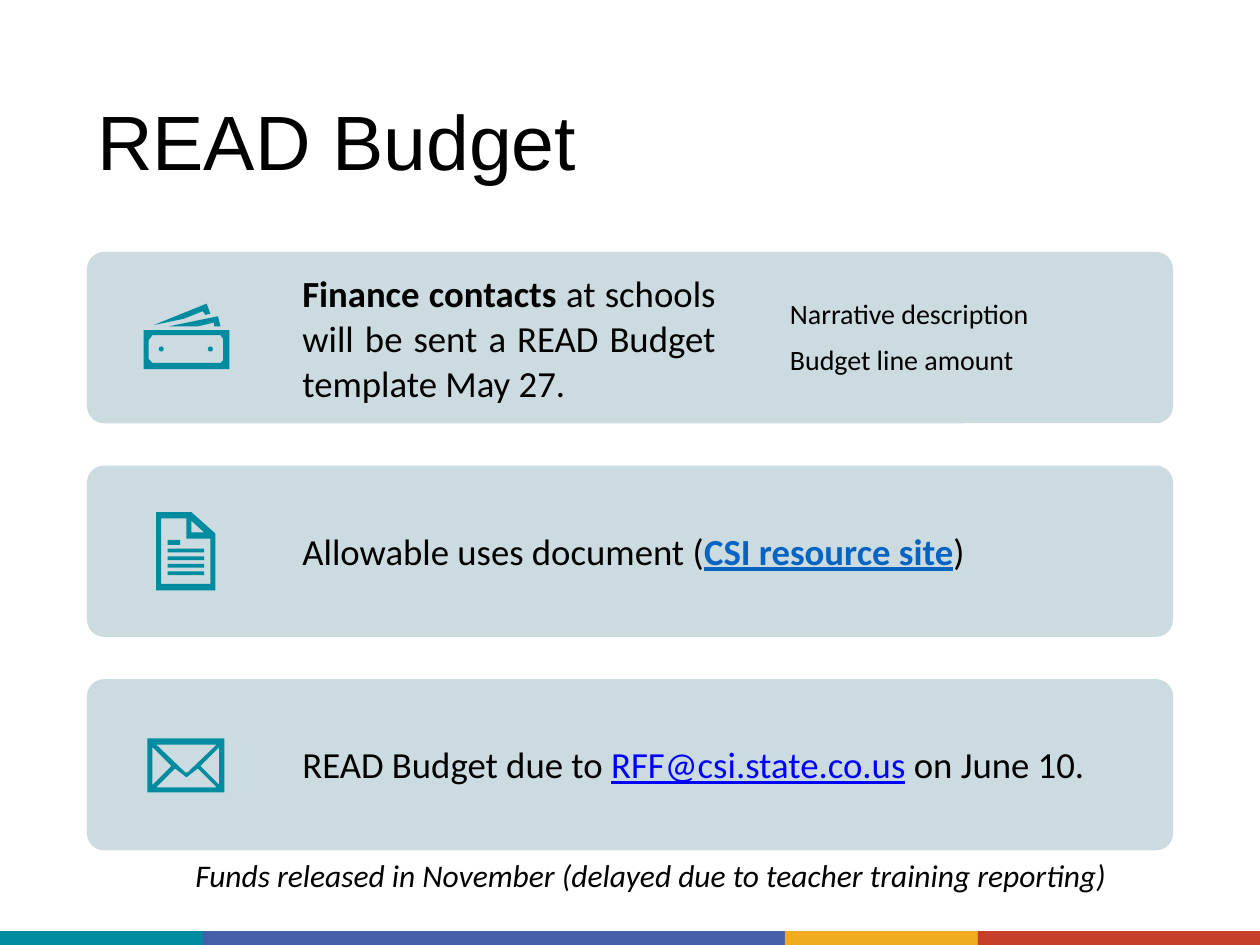
from dataclasses import dataclass
from pptx import Presentation
from pptx.dml.color import RGBColor
from pptx.enum.shapes import MSO_SHAPE
from pptx.enum.text import MSO_ANCHOR, PP_ALIGN
from pptx.util import Inches, Pt


@dataclass(frozen=True)
class Theme:
    teal: str = "008CA0"
    blue: str = "455FA9"
    gold: str = "EFAA1F"
    red: str = "C63F28"
    card: str = "CBDBDF"
    ink: str = "000000"
    link: str = "0563C1"
    mail: str = "0000FF"
    head: str = "Arial"
    body: str = "Calibri"
    big: int = 44
    text: int = 21
    note: int = 18
    small: int = 16


THEME = Theme()


def apply(item, **values):
    for key, value in values.items():
        setattr(item, key, value)


def paint(shape, color):
    shape.shadow.inherit = False
    shape.fill.solid()
    shape.fill.fore_color.rgb = RGBColor.from_string(color)
    shape.line.fill.background()


def write(para, runs, **base):
    for text, extra in runs:
        values = {"name": THEME.body, "size": THEME.text, "color": THEME.ink, **base, **extra}
        run = para.add_run()
        run.text = text
        run.font.color.rgb = RGBColor.from_string(values.pop("color"))
        apply(run.font, **{**values, "size": Pt(values["size"])})


def set_frame(frame, **values):
    margins = {"margin_left": 0, "margin_right": 0, "margin_top": 0, "margin_bottom": 0}
    apply(frame, **{"word_wrap": True, "vertical_anchor": MSO_ANCHOR.TOP, **margins, **values})


def add_text(slide, box, lines, form=None, **base):
    frame = slide.shapes.add_textbox(*map(Inches, box)).text_frame
    set_frame(frame)
    for i, runs in enumerate(lines):
        para = frame.add_paragraph() if i else frame.paragraphs[0]
        apply(para, **(form or {}))
        write(para, runs, **base)


def rect(left, top, right, bottom):
    return [(left, top), (right, top), (right, bottom), (left, bottom)]


def add_icon(slide, left, top, loops):
    first, *rest = [[(Inches(x), Inches(y)) for x, y in loop] for loop in loops]
    pen = slide.shapes.build_freeform(*first[0], scale=1.0)
    pen.add_line_segments(first[1:], close=True)
    for loop in rest:
        pen.move_to(*loop[0])
        pen.add_line_segments(loop[1:], close=True)
    paint(pen.convert_to_shape(Inches(left), Inches(top)), THEME.teal)


def add_cash(slide, left, top):
    add_icon(slide, left, top, [
        rect(0.45, 0.62, 1.13, 0.93),
        [(0.52, 0.66), (0.49, 0.7), (0.49, 0.85), (0.52, 0.88),
         (1.06, 0.88), (1.08, 0.86), (1.08, 0.69), (1.06, 0.66)],
        [(0.98, 0.49), (0.95, 0.41), (0.53, 0.58), (0.77, 0.53), (0.92, 0.47), (0.94, 0.5)],
        [(1.06, 0.59), (1.04, 0.51), (0.65, 0.59), (0.88, 0.59), (1.01, 0.56), (1.01, 0.59)],
    ])
    for x in (0.57, 0.96):
        dot = slide.shapes.add_shape(
            MSO_SHAPE.OVAL, Inches(left + x), Inches(top + 0.75), Inches(0.04), Inches(0.04))
        paint(dot, THEME.teal)


def add_page(slide, left, top):
    rows = [rect(0.64, y, 0.93, y + 0.03) for y in (0.66, 0.72, 0.78, 0.84)]
    add_icon(slide, left, top, [
        [(0.55, 0.37), (0.83, 0.37), (1.02, 0.54), (1.02, 0.99), (0.55, 0.99)],
        [(0.59, 0.42), (0.79, 0.42), (0.79, 0.58), (0.98, 0.58), (0.98, 0.94), (0.59, 0.94)],
        [(0.83, 0.44), (0.93, 0.53), (0.83, 0.53)],
        rect(0.64, 0.59, 0.74, 0.63), *rows,
    ])


def add_mail(slide, left, top):
    add_icon(slide, left, top, [
        rect(0.48, 0.47, 1.09, 0.9),
        [(0.55, 0.52), (0.78, 0.74), (0.8, 0.74), (1.03, 0.52)],
        [(0.52, 0.54), (0.67, 0.69), (0.52, 0.84)],
        [(1.05, 0.54), (0.9, 0.69), (1.05, 0.84)],
        [(0.55, 0.86), (0.7, 0.71), (0.79, 0.78), (0.88, 0.71), (1.03, 0.86)],
    ])


def add_card(slide, box, icon, runs, inset, size, form=None):
    left, top = box[:2]
    card = slide.shapes.add_shape(MSO_SHAPE.ROUNDED_RECTANGLE, *map(Inches, box))
    card.adjustments[0] = 0.1
    paint(card, THEME.card)
    icon(slide, left, top)
    add_text(slide, (left + 1.71, top + inset, *size), [runs], form)


def add_cards(slide, box):
    left, top, width, height = box
    tall, gap = 1.36, (height - 3 * 1.36) / 2
    bold = {"bold": True}
    link = {"bold": True, "underline": True, "color": THEME.link}
    cards = [
        (add_cash, [("Finance contacts ", bold),
                    ("at schools will be sent a READ Budget template May 27.", {})],
         0.14, (3.28, 1.09), {"alignment": PP_ALIGN.JUSTIFY, "line_spacing": 1.02}),
        (add_page, [("Allowable uses document (", {}), ("CSI resource site", link), (")", {})],
         0.5, (5.5, 0.38)),
        (add_mail, [("READ Budget due to ", {}),
                    ("RFF@csi.state.co.us", {"underline": True, "color": THEME.mail}),
                    (" on June 10.", {})],
         0.5, (6.5, 0.38)),
    ]
    for i, card in enumerate(cards):
        add_card(slide, (left, top + i * (tall + gap), width, tall), *card)
    add_text(slide, (left + 5.58, top + 0.25, 2.4, 0.76),
             [[("Narrative description", {})], [("Budget line amount", {})]],
             {"line_spacing": 1.38}, size=THEME.small)


def add_title(slide, box):
    title = slide.shapes.title
    left, top, width, height = map(Inches, box)
    apply(title, left=left, top=top, width=width, height=height)
    set_frame(title.text_frame, margin_top=Inches(0.74))
    para = title.text_frame.paragraphs[0]
    para.alignment = PP_ALIGN.LEFT
    write(para, [("READ Budget", {})], name=THEME.head, size=THEME.big)


def add_stripe(slide, box):
    left, top, width, height = box
    stops = [0, 1.61, 6.23, 7.76, width]
    colors = [THEME.teal, THEME.blue, THEME.gold, THEME.red]
    for start, end, color in zip(stops, stops[1:], colors):
        bar = slide.shapes.add_shape(
            MSO_SHAPE.RECTANGLE, *map(Inches, (left + start, top, end - start, height)))
        paint(bar, color)


def add_note(slide, box):
    text = "Funds released in November (delayed due to teacher training reporting)"
    add_text(slide, box, [[(text, {})]], size=THEME.note, italic=True)


def main():
    deck = Presentation()
    apply(deck, slide_width=Inches(10), slide_height=Inches(7.5))
    slide = deck.slides.add_slide(deck.slide_layouts[5])
    add_stripe(slide, (0, 7.39, 10, 0.11))
    add_title(slide, (0.77, 0, 8.36, 1.79))
    add_cards(slide, (0.69, 2, 8.62, 4.75))
    add_note(slide, (1.55, 6.79, 7.4, 0.31))
    deck.save("out.pptx")


if __name__ == "__main__":
    main()
